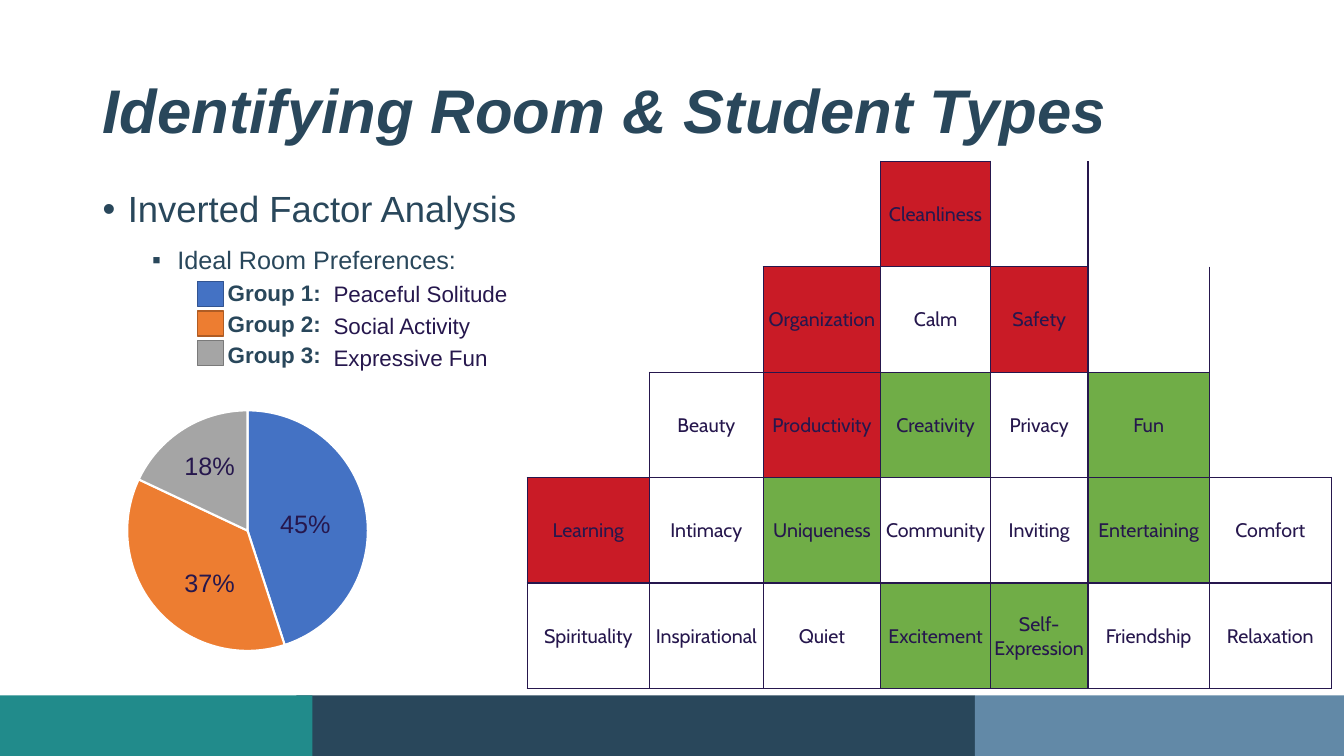
from lxml.etree import SubElement
from pptx import Presentation
from pptx.chart.data import CategoryChartData
from pptx.dml.color import RGBColor
from pptx.enum.chart import XL_CHART_TYPE
from pptx.enum.shapes import MSO_SHAPE
from pptx.enum.text import MSO_ANCHOR, PP_ALIGN
from pptx.oxml import parse_xml
from pptx.oxml.ns import nsdecls, qn
from pptx.util import Inches, Pt

COLORS = {name: RGBColor.from_string(value) for name, value in {
    "slate": "29475B", "teal": "218B8B", "steel": "6289A7", "ink": "26174D",
    "red": "C91B26", "green": "70AD47", "white": "FFFFFF",
    "blue": "4472C4", "orange": "ED7D31", "gray": "A5A5A5",
    "blue edge": "325491", "orange edge": "AF5C24", "gray edge": "7A7A7A",
}.items()}

deck = Presentation()
deck.slide_width, deck.slide_height = Inches(13.33), Inches(7.5)
slide = deck.slides.add_slide(deck.slide_layouts[6])


def share(left, top, width, height):
    """Turn percentages of the slide into left, top, width and height."""
    across, down = deck.slide_width / 100, deck.slide_height / 100
    return [round(n) for n in (left * across, top * down, width * across, height * down)]


def write(area, lines, wrap=True, anchor=MSO_ANCHOR.TOP, spacing=None):
    """Add text; a line is (text, size, color, bold, italic, margin, bullet)."""
    frame = slide.shapes.add_textbox(*share(*area)).text_frame
    frame.word_wrap, frame.vertical_anchor = wrap, anchor
    for i, (text, size, color, bold, italic, margin, bullet) in enumerate(lines):
        para = frame.paragraphs[0] if i == 0 else frame.add_paragraph()
        para.text = text
        if spacing:
            para.line_spacing = spacing
        if i:
            para.space_before = Pt(5)
        props = para._p.get_or_add_pPr()
        props.set("marL", str(Inches(margin)))
        if bullet:
            props.set("indent", str(Inches(-0.25)))
            SubElement(props, qn("a:buFont"), typeface="Arial")
            SubElement(props, qn("a:buChar"), char=bullet)
        para.font.name, para.font.size = "Arial", Pt(size)
        para.font.bold, para.font.italic = bold, italic
        para.font.color.rgb = COLORS[color]


# Footer bands
for left, width, color in [(22.05, 50.48, "slate"), (0, 23.25, "teal"), (72.53, 27.47, "steel")]:
    band = slide.shapes.add_shape(MSO_SHAPE.RECTANGLE, *share(left, 92, width, 8))
    band.shadow.inherit = False
    band.fill.solid()
    band.fill.fore_color.rgb = COLORS[color]
    band.line.fill.background()

# Pyramid of room qualities
pyramid = [
    ["Cleanliness"],
    ["Organization", "Calm", "Safety"],
    ["Beauty", "Productivity", "Creativity", "Privacy", "Fun"],
    ["Learning", "Intimacy", "Uniqueness", "Community", "Inviting", "Entertaining", "Comfort"],
    ["Spirituality", "Inspirational", "Quiet", "Excitement", "Self-Expression", "Friendship",
     "Relaxation"],
]
highlights = {
    "red": ["Cleanliness", "Organization", "Safety", "Productivity", "Learning"],
    "green": ["Creativity", "Fun", "Uniqueness", "Entertaining", "Excitement", "Self-Expression"],
}
column_shares = [9.1, 8.46, 8.74, 8.17, 7.25, 9.04, 9.07]
qualities = {(row, (7 - len(words)) // 2 + i): word
             for row, words in enumerate(pyramid) for i, word in enumerate(words)}
table = slide.shapes.add_table(5, 7, *share(39.23, 21.33, sum(column_shares), 69.75)).table
table.first_row = table.horz_banding = False
table._tbl.tblPr.find(qn("a:tableStyleId")).text = "{2D5ABB26-0587-4C30-8999-92F81FD0307C}"
for column, width in zip(table.columns, column_shares):
    column.width = share(0, 0, width, 0)[2]

for row in range(5):
    for col in range(7):
        cell = table.cell(row, col)
        word = qualities.get((row, col))
        # An edge is drawn wherever a word stands on either side of it
        neighbours = {"lnL": (row, col - 1), "lnR": (row, col + 1),
                      "lnT": (row - 1, col), "lnB": (row + 1, col)}
        for edge, neighbour in neighbours.items():
            if word or neighbour in qualities:
                cell._tc.get_or_add_tcPr().append(parse_xml(
                    f'<a:{edge} {nsdecls("a")} w="12700"><a:solidFill>'
                    f'<a:srgbClr val="{COLORS["ink"]}"/></a:solidFill></a:{edge}>'))
        cell.fill.background()
        if not word:
            continue
        for color, words in highlights.items():
            if word in words:
                cell.fill.solid()
                cell.fill.fore_color.rgb = COLORS[color]
        cell.vertical_anchor = MSO_ANCHOR.MIDDLE
        cell.margin_left = cell.margin_right = cell.margin_top = Inches(0.01)
        cell.margin_bottom = 0
        cell.text = word
        quality = cell.text_frame.paragraphs[0]
        quality.alignment = PP_ALIGN.CENTER
        quality.font.name, quality.font.size = "Cabin", Pt(14)
        quality.font.color.rgb = COLORS["ink"]

# Title and outline
write((6.9, 5.33, 86.25, 19.33),
      [("Identifying Room & Student Types", 44, "slate", True, True, 0, None)],
      anchor=MSO_ANCHOR.MIDDLE, spacing=0.9)
write((6.9, 24.67, 90.08, 21.73),
      [("Inverted Factor Analysis", 26, "slate", False, False, 0.25, "•")], spacing=0.9)
write((3.08, 32.13, 44.55, 48.4),
      [("Ideal Room Preferences:", 18, "slate", False, False, 1.25, "▪")]
      + [(f"Group {n}:", 16, "slate", True, False, 1.75, None) for n in (1, 2, 3)], spacing=0.9)

# Pie of group sizes
groups = [("Peaceful Solitude", "blue", 45, 20.1, 66.53),
          ("Social Activity", "orange", 37, 12.98, 74.4),
          ("Expressive Fun", "gray", 18, 12.98, 58.93)]
sizes = CategoryChartData()
sizes.categories = ["1", "2", "3"]
sizes.add_series("Series 1", [group[2] for group in groups])
pie = slide.shapes.add_chart(XL_CHART_TYPE.PIE, *share(4.43, 52.4, 27.98, 35.6), sizes).chart
pie.has_legend = pie.has_title = False
pie.font.name, pie.font.size = "Arial", Pt(10)
pie.font.color.rgb = COLORS["ink"]
pie.plots[0].vary_by_categories = True
plot_area = pie._chartSpace.chart.plotArea
for old_layout in plot_area.findall(qn("c:layout")):
    plot_area.remove(old_layout)
plot_area.insert(0, parse_xml(
    f'<c:layout {nsdecls("c")}><c:manualLayout><c:layoutTarget val="inner"/>'
    '<c:xMode val="edge"/><c:yMode val="edge"/><c:x val="0.18"/><c:y val="0.05"/>'
    '<c:w val="0.64"/><c:h val="0.9"/></c:manualLayout></c:layout>'))

# Each group: slice, description, swatch and percentage
for i, (description, color, percent, label_left, label_top) in enumerate(groups):
    wedge = pie.plots[0].series[0].points[i].format
    wedge.fill.solid()
    wedge.fill.fore_color.rgb = COLORS[color]
    wedge.line.color.rgb = COLORS["white"]
    wedge.line.width = Pt(1.5)
    write((24.08, 36.4 + 4.2 * i, 14.55, 4.93),
          [(description, 16, "ink", False, False, 0, None)], wrap=False)
    swatch = slide.shapes.add_shape(MSO_SHAPE.RECTANGLE,
                                    *share(14.7, 37.2 + 3.93 * i, 1.95, 3.33))
    swatch.shadow.inherit = False
    swatch.fill.solid()
    swatch.fill.fore_color.rgb = COLORS[color]
    swatch.line.color.rgb = COLORS[f"{color} edge"]
    swatch.line.width = Pt(1)
    write((label_left, label_top, 5.33, 5.33),
          [(f"{percent}%", 18, "ink", False, False, 0, None)], wrap=False)

deck.save("out.pptx")
